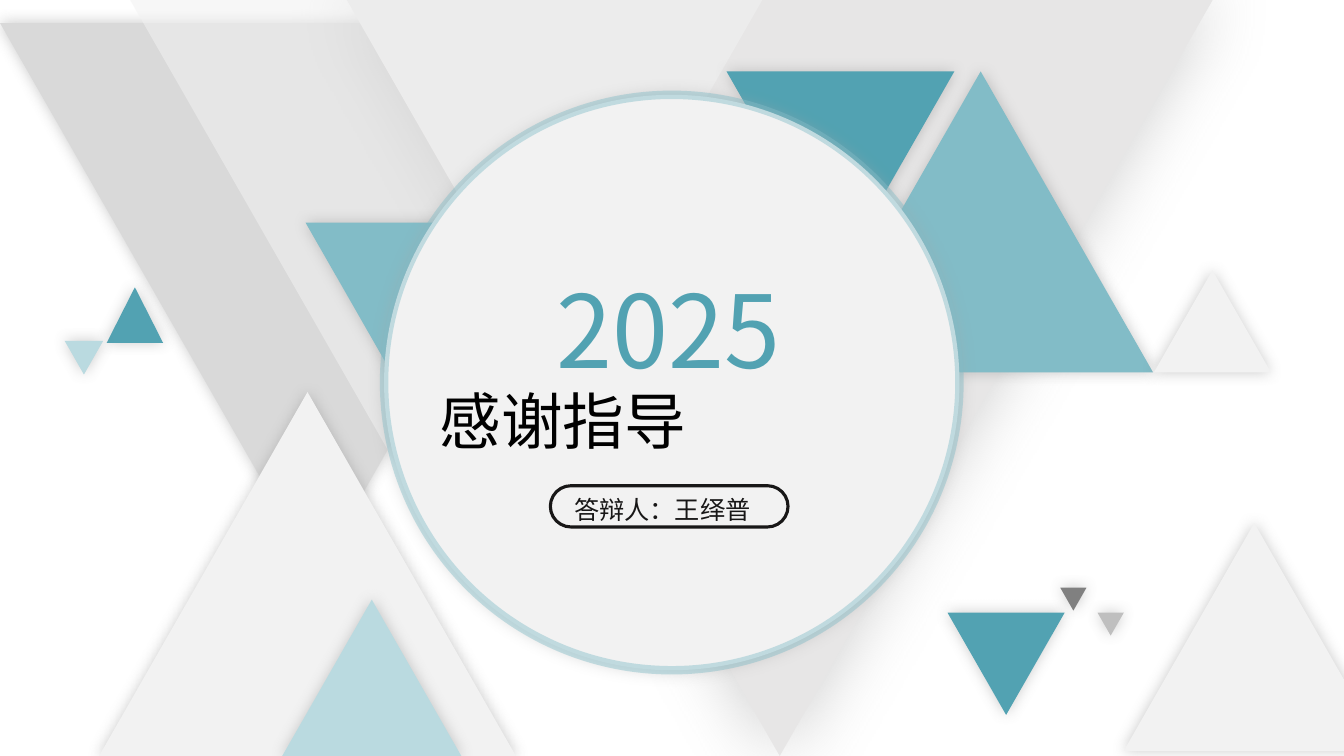
from lxml import etree
from pptx import Presentation
from pptx.dml.color import RGBColor
from pptx.enum.shapes import MSO_SHAPE
from pptx.enum.text import MSO_ANCHOR, MSO_AUTO_SIZE, PP_ALIGN
from pptx.oxml.ns import qn
from pptx.util import Cm, Pt

TRIANGLE, OVAL, PILL = MSO_SHAPE.ISOSCELES_TRIANGLE, MSO_SHAPE.OVAL, MSO_SHAPE.ROUNDED_RECTANGLE
CENTER, JUSTIFY = PP_ALIGN.CENTER, PP_ALIGN.JUSTIFY
TOP, NO_AUTOFIT = MSO_ANCHOR.TOP, MSO_AUTO_SIZE.NONE

TEAL = RGBColor(0x52, 0xA2, 0xB2)
MID_TEAL = RGBColor(0x82, 0xBC, 0xC7)
PALE_TEAL = RGBColor(0xBA, 0xDA, 0xE0)
OFF_WHITE = RGBColor(0xF2, 0xF2, 0xF2)
WARM_GREY = RGBColor(0xE7, 0xE6, 0xE6)
LIGHT_GREY = RGBColor(0xD9, 0xD9, 0xD9)
SILVER = RGBColor(0xBF, 0xBF, 0xBF)
SOFT_GREY = RGBColor(0xA6, 0xA6, 0xA6)
DARK_GREY = RGBColor(0x80, 0x80, 0x80)
INK = RGBColor(0x18, 0x17, 0x17)
BLACK = RGBColor(0, 0, 0)

FONT = "Noto Sans CJK SC"
SLIDE_WIDTH, SLIDE_HEIGHT = 33.87, 19.05
TRIANGLE_RATIO = 0.873
UP, DOWN = 0, 180

# left, top, width (cm), rotation, colour, shadow blur (pt, 0 for none), opacity (%)
TRIANGLES = [
    (0, 0.58, 15.93, DOWN, LIGHT_GREY, 10, 100),
    (8.74, 0, 21.82, DOWN, WARM_GREY, 53, 100),
    (2.49, 9.88, 10.52, UP, OFF_WHITE, 10, 100),
    (7.11, 15.11, 4.52, UP, PALE_TEAL, 10, 100),
    (3.28, 0, 15.93, DOWN, OFF_WHITE, 0, 54),
    (20.37, 1.8, 8.69, UP, MID_TEAL, 10, 100),
    (7.7, 5.61, 8.99, DOWN, MID_TEAL, 10, 100),
    (23.88, 15.44, 2.95, DOWN, TEAL, 10, 100),
    (29.08, 6.81, 2.95, UP, OFF_WHITE, 10, 100),
    (18.31, 1.8, 5.74, DOWN, TEAL, 10, 100),
    (2.69, 7.24, 1.42, UP, TEAL, 10, 100),
    (1.63, 8.59, 0.97, DOWN, PALE_TEAL, 10, 100),
    (26.72, 14.81, 0.66, DOWN, DARK_GREY, 10, 100),
    (27.66, 15.44, 0.66, DOWN, SILVER, 10, 100),
    (28.32, 13.18, 6.58, UP, OFF_WHITE, 10, 100),
]


def set_opacity(parent, percent):
    color = next(parent.iter(qn("a:srgbClr")))
    etree.SubElement(color, qn("a:alpha")).set("val", str(percent * 1000))


def add_glow_shadow(shape, color, blur):
    """Spread a 40 % shadow evenly around the shape."""
    effects = shape._element.spPr.find(qn("a:effectLst"))
    shadow = etree.SubElement(effects, qn("a:outerShdw"), blurRad=str(Pt(blur)),
                              dist="0", dir="0", algn="ctr", rotWithShape="0")
    etree.SubElement(shadow, qn("a:srgbClr")).set("val", str(color))
    set_opacity(shadow, 40)


def add_plain_shape(slide, preset, left, top, width, height, fill=None):
    shape = slide.shapes.add_shape(preset, Cm(left), Cm(top), Cm(width), Cm(height))
    shape.shadow.inherit = False
    shape.line.fill.background()
    if fill is None:
        shape.fill.background()
    else:
        shape.fill.solid()
        shape.fill.fore_color.rgb = fill
    return shape


def format_paragraph(paragraph, text, size, color, alignment):
    paragraph.text = text
    paragraph.alignment = alignment
    paragraph.space_before = Pt(0)
    font = paragraph.font
    font.size, font.name, font.color.rgb = Pt(size), FONT, color
    east_asian = etree.SubElement(font._element, qn("a:ea"))
    east_asian.set("typeface", FONT)


def add_triangles(slide, left, top):
    for x, y, width, rotation, color, blur, opacity in TRIANGLES:
        height = 1.4 if width == 1.42 else width * TRIANGLE_RATIO
        triangle = add_plain_shape(slide, TRIANGLE, left + x, top + y, width, height, color)
        triangle.rotation = rotation
        if opacity < 100:
            set_opacity(triangle._element.spPr, opacity)
        if blur:
            add_glow_shadow(triangle, DARK_GREY, blur)


def add_title(slide, left, top, width, height):
    title = slide.shapes.title
    title.left, title.top, title.width, title.height = Cm(left), Cm(top), Cm(width), Cm(height)
    slide.shapes._spTree.append(title._element)  # bring in front of the circle
    frame = title.text_frame
    frame.word_wrap, frame.auto_size, frame.vertical_anchor = True, NO_AUTOFIT, TOP
    year, thanks = frame.paragraphs[0], frame.add_paragraph()
    format_paragraph(year, "2025", 72, TEAL, CENTER)
    format_paragraph(thanks, "感谢指导", 44, BLACK, JUSTIFY)
    year.line_spacing, thanks.line_spacing = Pt(93), Pt(49)


def add_speaker(slide, left, top):
    box = slide.shapes.add_textbox(Cm(left), Cm(top + 0.08), Cm(5.64), Cm(1.02))
    box.text_frame.word_wrap = True
    format_paragraph(box.text_frame.paragraphs[0], "答辩人：王绎普", 18, INK, CENTER)
    pill = add_plain_shape(slide, PILL, left, top, 5.99, 1.04)
    pill.adjustments[0] = 0.5
    pill.line.color.rgb = INK
    pill.line.width = Pt(2.25)


def add_badge(slide, left, top, diameter):
    circle = add_plain_shape(slide, OVAL, left, top, diameter, diameter, OFF_WHITE)
    circle.line.color.rgb = MID_TEAL
    circle.line.width = Pt(6)
    set_opacity(circle.line._ln, 43)
    add_glow_shadow(circle, SOFT_GREY, 10)
    add_title(slide, left + 1.14, top + 3.99, 12.04, 5.21)
    add_speaker(slide, left + 4.19, top + 9.85)


def main():
    presentation = Presentation()
    presentation.slide_width, presentation.slide_height = Cm(SLIDE_WIDTH), Cm(SLIDE_HEIGHT)
    slide = presentation.slides.add_slide(presentation.slide_layouts.get_by_name("Title Only"))
    add_triangles(slide, 0, 0)
    add_badge(slide, 9.68, 2.39, 14.5)
    presentation.save("out.pptx")


if __name__ == "__main__":
    main()
